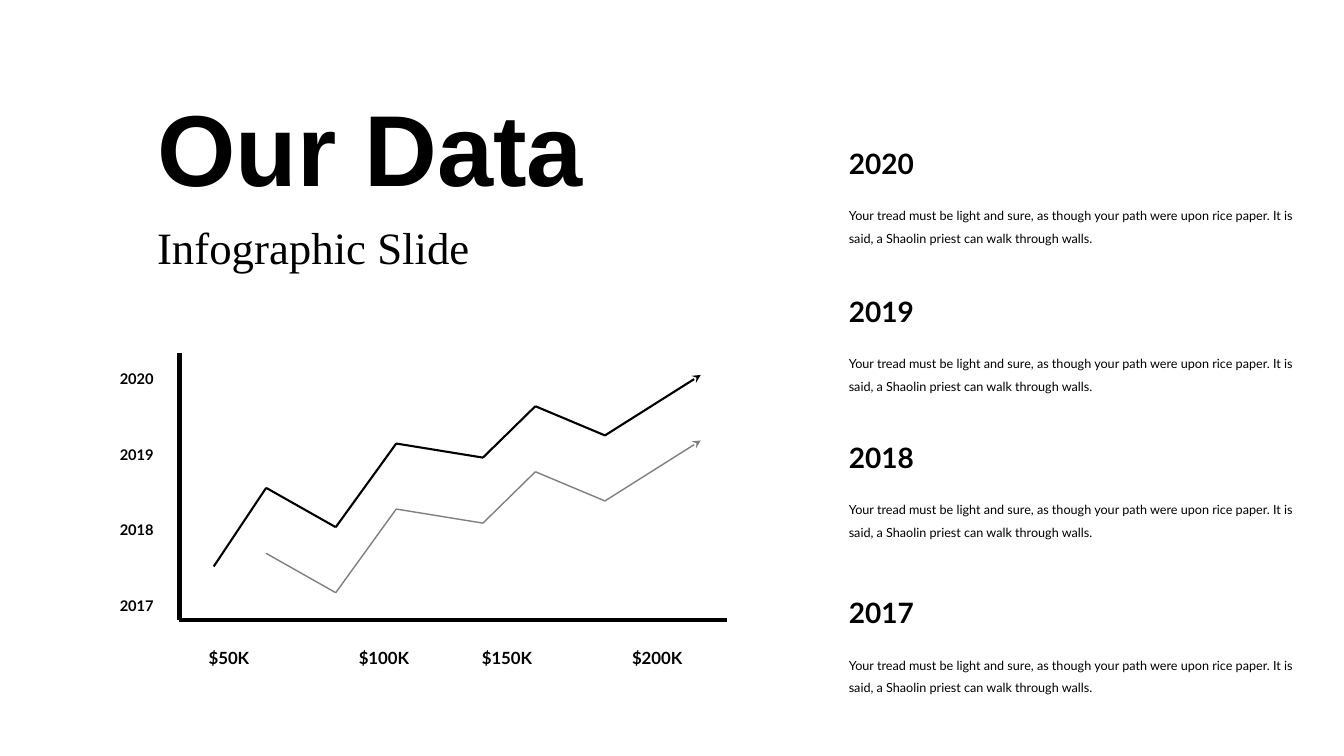
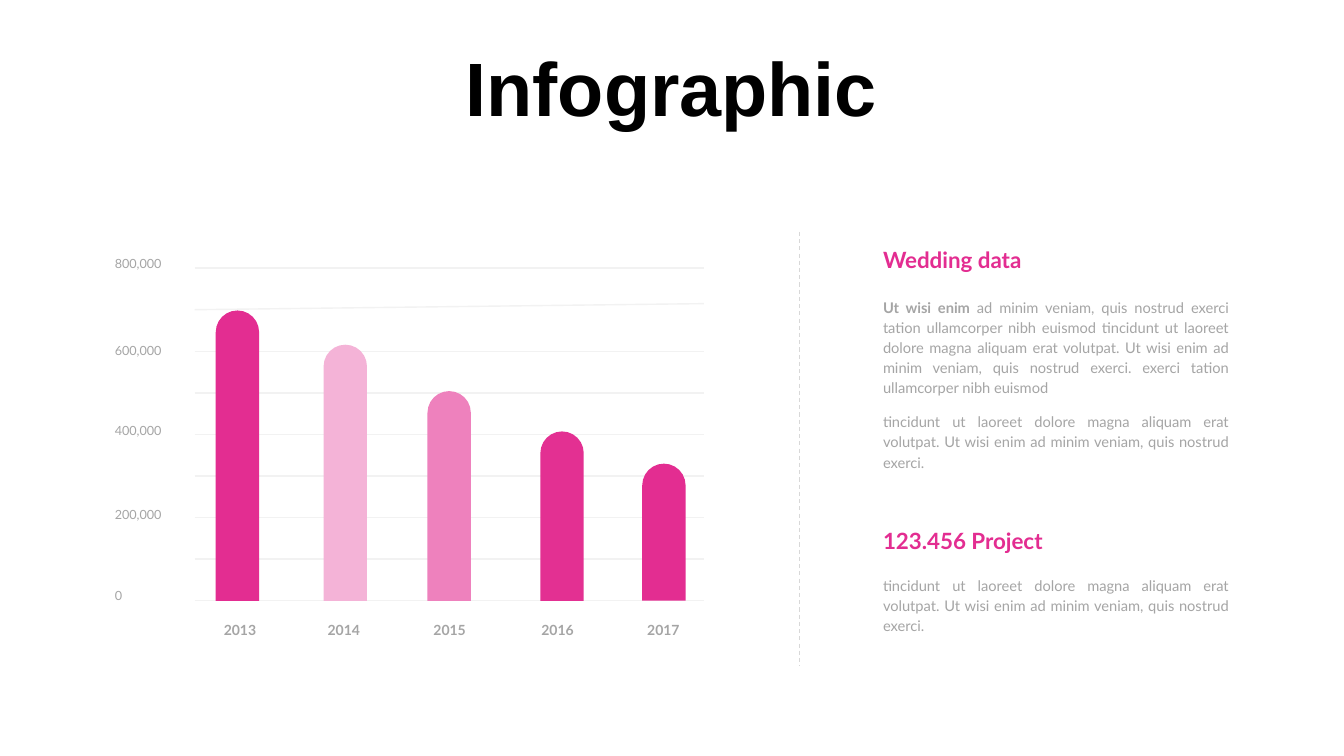
from collections import namedtuple
from itertools import pairwise

from lxml import etree
from pptx import Presentation
from pptx.dml.color import RGBColor
from pptx.enum.dml import MSO_LINE
from pptx.enum.shapes import MSO_CONNECTOR, MSO_SHAPE
from pptx.enum.text import MSO_ANCHOR, MSO_AUTO_SIZE, PP_ALIGN
from pptx.oxml.ns import qn
from pptx.util import Inches, Pt

STRAIGHT = MSO_CONNECTOR.STRAIGHT
ROUND_TOP = MSO_SHAPE.ROUND_2_SAME_RECTANGLE
DASH = MSO_LINE.DASH
TOP, MIDDLE, BOTTOM = MSO_ANCHOR.TOP, MSO_ANCHOR.MIDDLE, MSO_ANCHOR.BOTTOM
LEFT, CENTER, JUSTIFY = PP_ALIGN.LEFT, PP_ALIGN.CENTER, PP_ALIGN.JUSTIFY
TITLE_ONLY = 5

COLORS = {
    "ink": "000000",
    "second_series": "7F7F7F",
    "muted": "A5A5A5",
    "grid": "F2F2F2",
    "divider": "D8D8D8",
    "pink": "E32D91",
    "pink_light": "F4B3D7",
    "pink_mid": "EE81BD",
    "pink_warm": "E33092",
}

Style = namedtuple("Style", "font color paragraph", defaults=({},))
Box = namedtuple("Box", "left top width height")


def lato(size, color="ink", bold=False, **paragraph):
    font = {"name": "Lato", "size": Pt(size), "bold": bold}
    return Style(font, color, paragraph)


def title_style(size, align):
    font = {"name": "Arial", "size": Pt(size), "bold": True}
    return Style(font, "ink", {"alignment": align})


SUBTITLE = Style({"name": "Times New Roman", "size": Pt(32), "bold": False}, "ink")
YEAR_TICK = lato(10.5, bold=True, line_spacing=2.5)
MONEY_TICK = lato(12, bold=True, line_spacing=2.5)
ENTRY_YEAR = lato(20, bold=True)
ENTRY_TEXT = lato(9, line_spacing=1.5)
VALUE_TICK = lato(9, "muted")
BAR_YEAR = lato(10, "muted", bold=True, alignment=CENTER)
HEADING = lato(16, "pink", bold=True)
BODY = lato(10.5, "muted", alignment=JUSTIFY, line_spacing=1.14)

ENTRY_WORDING = (
    "Your tread must be light and sure, as though your path were upon rice paper. "
    "It is said, a Shaolin priest can walk through walls."
)
BODY_LEAD = "Ut wisi enim "
BODY_WORDING = (
    "ad minim veniam, quis nostrud exerci tation ullamcorper nibh euismod tincidunt "
    "ut laoreet dolore magna aliquam erat volutpat. Ut wisi enim ad minim veniam, "
    "quis nostrud exerci. exerci tation ullamcorper nibh euismod"
)
BODY_CLOSING = (
    "tincidunt ut laoreet dolore magna aliquam erat volutpat. "
    "Ut wisi enim ad minim veniam, quis nostrud exerci."
)


def rgb(name):
    return RGBColor.from_string(COLORS[name])


def apply(target, values):
    for key, value in values.items():
        setattr(target, key, value)


def write(paragraph, text, style, **font_changes):
    apply(paragraph, style.paragraph)
    run = paragraph.add_run()
    run.text = text
    apply(run.font, style.font | font_changes)
    run.font.color.rgb = rgb(style.color)


def add_text(shapes, box, text, style):
    frame = shapes.add_textbox(*map(Inches, box)).text_frame
    frame.word_wrap = True
    write(frame.paragraphs[0], text, style)
    return frame


def add_line(shapes, start, end, color, width, dash=None, arrow=False):
    connector = shapes.add_connector(STRAIGHT, *map(Inches, start + end))
    connector.line.color.rgb = rgb(color)
    connector.line.width = Pt(width)
    if dash:
        connector.line.dash_style = dash
    properties = connector.element.spPr
    if arrow:
        etree.SubElement(properties.find(qn("a:ln")), qn("a:tailEnd"), type="stealth")
    etree.SubElement(properties, qn("a:effectLst"))


def add_title(slide, box, text, style, anchor):
    title = slide.shapes.title
    apply(title, dict(zip(Box._fields, map(Inches, box))))
    frame = title.text_frame
    apply(frame, {
        "word_wrap": True,
        "auto_size": MSO_AUTO_SIZE.NONE,
        "vertical_anchor": anchor,
    })
    write(frame.paragraphs[0], text, style)


def add_series(shapes, points, color, width):
    """Join the points with lines, the last one ending in an arrowhead."""
    series = shapes.add_group_shape().shapes
    for start, end in pairwise(points):
        add_line(series, start, end, color, width, arrow=end == points[-1])


def add_trend_chart(shapes, plot):
    bottom = plot.top + plot.height
    axes = shapes.add_group_shape().shapes
    corner = (plot.left, bottom)
    add_line(axes, corner, (plot.left + plot.width, bottom), "ink", 3)
    add_line(axes, (plot.left, plot.top), corner, "ink", 3)

    offsets = [(0.34, 2.12), (0.86, 1.34), (1.55, 1.73), (2.15, 0.9),
               (3.01, 1.04), (3.53, 0.53), (4.22, 0.82), (5.17, 0.22)]
    trend = [(plot.left + x, plot.top + y) for x, y in offsets]
    lower_trend = [(x, y + 0.65) for x, y in trend[1:]]
    add_series(shapes, trend, "ink", 1.5)
    add_series(shapes, lower_trend, "second_series", 1)

    for row, year in enumerate(range(2020, 2016, -1)):
        tick = Box(plot.left - 0.69, plot.top - 0.14 + row * 0.75, 0.6, 0.54)
        add_text(shapes, tick, str(year), YEAR_TICK)
    amounts = {"$50K": 0.19, "$100K": 1.68, "$150K": 2.9, "$200K": 4.39}
    for amount, x in amounts.items():
        tick = Box(plot.left + x, bottom - 0.07, 0.85, 0.61)
        add_text(shapes, tick, amount, MONEY_TICK)


def add_year_entry(shapes, box, year):
    add_text(shapes, Box(box.left, box.top, 2.36, 0.44), year, ENTRY_YEAR)
    text_box = Box(box.left, box.top + 0.54, box.width, box.height - 0.54)
    add_text(shapes, text_box, ENTRY_WORDING, ENTRY_TEXT)


def add_bar_chart(shapes, plot):
    chart = shapes.add_group_shape().shapes
    right, bottom = plot.left + plot.width, plot.top + plot.height
    grid_steps, slanted_step = 8, 7
    for step in range(grid_steps + 1):
        y = bottom - step * plot.height / grid_steps
        rise = 0.06 if step == slanted_step else 0
        add_line(chart, (plot.left, y), (right, y - rise), "grid", 1)

    values = {"0": 3.12, "200,000": 2.32, "400,000": 1.49,
              "600,000": 0.69, "800,000": -0.17}
    for value, y in values.items():
        tick = Box(plot.left - 0.89, plot.top + y, 0.7, 0.25)
        add_text(chart, tick, value, VALUE_TICK)

    bars = [  # year, bar offset, label centre, bar height, colour
        ("2013", 0.21, 0.45, 2.88, "pink"),
        ("2014", 1.28, 1.48, 2.54, "pink_light"),
        ("2015", 2.31, 2.53, 2.08, "pink_mid"),
        ("2016", 3.43, 3.6, 1.68, "pink_warm"),
        ("2017", 4.44, 4.65, 1.36, "pink"),
    ]
    label_width = 0.6
    for year, x, center, height, color in bars:
        bar_box = Box(plot.left + x, bottom - height, 0.43, height)
        bar = chart.add_shape(ROUND_TOP, *map(Inches, bar_box))
        bar.adjustments[0], bar.adjustments[1] = 0.5, 0
        bar.shadow.inherit = False
        bar.fill.solid()
        bar.fill.fore_color.rgb = rgb(color)
        bar.line.fill.background()
        label = Box(plot.left + center - label_width / 2, bottom + 0.16, label_width, 0.27)
        add_text(chart, label, year, BAR_YEAR)


def add_wedding_panel(shapes, box):
    headings = {"Wedding data": 0, "123.456 Project": 2.79}
    for heading, y in headings.items():
        add_text(shapes, Box(box.left, box.top + y, 1.9, 0.37), heading, HEADING)

    frame = add_text(shapes, Box(box.left, box.top + 0.5, box.width, 2.19), BODY_LEAD, BODY)
    frame.paragraphs[0].runs[0].font.bold = True
    write(frame.paragraphs[0], BODY_WORDING, BODY)
    closing = frame.add_paragraph()
    write(closing, BODY_CLOSING, BODY)
    closing.space_before = Pt(10)

    add_text(shapes, Box(box.left, box.top + 3.26, box.width, 0.86), BODY_CLOSING, BODY)


def build_data_slide(slide):
    shapes = slide.shapes
    add_title(slide, Box(1.46, 0.73, 5.65, 1.45), "Our Data", title_style(72, LEFT), MIDDLE)
    add_text(shapes, Box(1.46, 2.13, 4.64, 0.64), "Infographic Slide", SUBTITLE)
    add_trend_chart(shapes, Box(1.78, 3.5, 5.43, 2.65))
    entry_tops = {"2020": 1.4, "2019": 2.87, "2018": 4.32, "2017": 5.86}
    for year, top in entry_tops.items():
        add_year_entry(shapes, Box(8.32, top, 4.61, 1.1), year)


def build_infographic_slide(slide):
    shapes = slide.shapes
    add_title(slide, Box(4.21, 0.35, 4.9, 1.01), "Infographic", title_style(54, CENTER), BOTTOM)
    add_bar_chart(shapes, Box(1.93, 2.66, 5.05, 3.3))
    add_line(shapes, (7.93, 2.3), (7.93, 6.6), "divider", 0.75, dash=DASH)
    add_wedding_panel(shapes, Box(8.66, 2.39, 3.63, 4.12))


def main():
    presentation = Presentation()
    presentation.slide_width = Inches(13.33)
    presentation.slide_height = Inches(7.5)
    layout = presentation.slide_layouts[TITLE_ONLY]
    for build in (build_data_slide, build_infographic_slide):
        build(presentation.slides.add_slide(layout))
    presentation.save("out.pptx")


if __name__ == "__main__":
    main()
